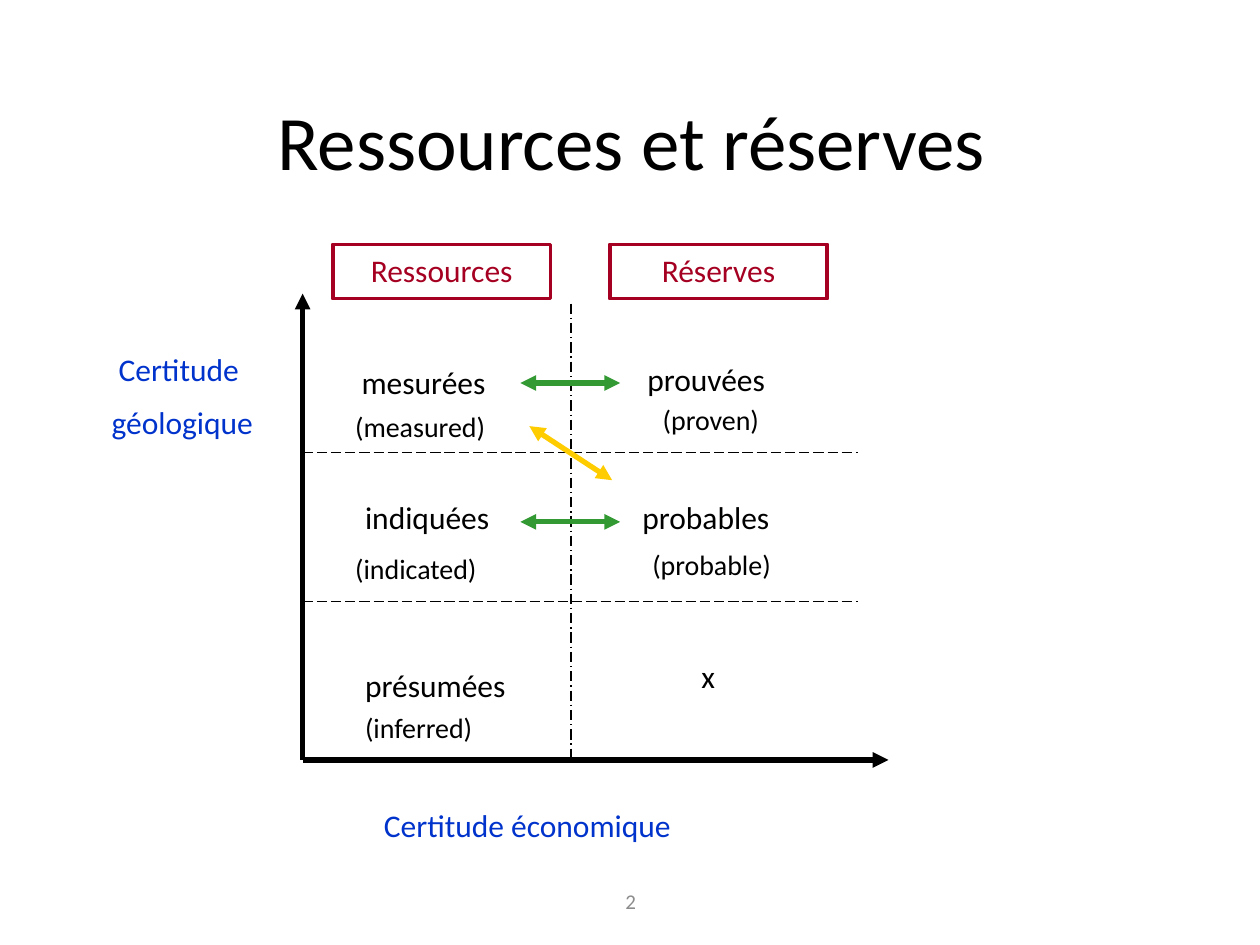
import pptx
import pptx.util
import pptx.dml.color
import pptx.enum.dml
import pptx.enum.shapes
import pptx.enum.text
import pptx.oxml
import pptx.oxml.ns

Cm = pptx.util.Cm
Pt = pptx.util.Pt
DASH = pptx.enum.dml.MSO_LINE
ALIGN = pptx.enum.text.PP_ALIGN
ANCHOR = pptx.enum.text.MSO_ANCHOR
BLACK, BLUE, RED, GREEN, GOLD, GREY = (
    "000000", "0033CC", "A50021", "339933", "FFCC00", "8C8C8C")


def paint(text):
    return pptx.dml.color.RGBColor.from_string(text)


def write(frame, text, size, color, align=ALIGN.LEFT, gap=0):
    frame.text = text
    for index, para in enumerate(frame.paragraphs):
        para.alignment = align
        para.space_before = Pt(gap if index else 0)
        for run in para.runs:
            run.font.name = "Calibri"
            run.font.size = Pt(size)
            run.font.color.rgb = paint(color)


def label(slide, text, place, size=18, color=BLACK, align=ALIGN.LEFT, wrap=True):
    box = slide.shapes.add_textbox(*map(Cm, place))
    write(box.text_frame, text, size, color, align, 9)
    box.text_frame.word_wrap = wrap
    return box


def heading(slide, text, left):
    box = slide.shapes.add_shape(
        pptx.enum.shapes.MSO_SHAPE.RECTANGLE, Cm(left), Cm(4.93), Cm(4.39), Cm(1.09))
    box.shadow.inherit = False
    box.fill.background()
    box.line.color.rgb = paint(RED)
    box.line.width = Pt(2.25)
    box.text_frame.vertical_anchor = ANCHOR.TOP
    write(box.text_frame, text, 18, RED, ALIGN.CENTER)


def draw(slide, ends, color=BLACK, width=3, tips=(), dash=None):
    line = slide.shapes.add_connector(
        pptx.enum.shapes.MSO_CONNECTOR.STRAIGHT, *map(Cm, ends))
    line.line.color.rgb = paint(color)
    line.line.width = Pt(width)
    if dash:
        line.line.dash_style = dash
    stroke = line.line._get_or_add_ln()
    for tip in tips:
        end = pptx.oxml.ns.qn("a:" + tip)
        stroke.append(stroke.makeelement(end, {"type": "triangle"}))
    props = line._element.spPr
    props.append(props.makeelement(pptx.oxml.ns.qn("a:effectLst"), {}))


def name(slide, text):
    title = slide.shapes.title
    title.left, title.top, title.width, title.height = map(
        Cm, (1.3, 0.91, 22.86, 3.81))
    title.text_frame.vertical_anchor = ANCHOR.MIDDLE
    write(title.text_frame, text, 44, BLACK, ALIGN.CENTER)


def grid(slide):
    left, base = 6.1, 15.32
    draw(slide, (left, base, 17.91, base), tips=["tailEnd"])
    draw(slide, (left, base, left, 5.92), tips=["tailEnd"])
    draw(slide, (11.51, 6.12, 11.51, base), width=0.75, dash=DASH.LONG_DASH_DOT)
    for top in (9.12, 12.12):
        draw(slide, (left, top, 17.3, top), width=0.75, dash=DASH.LONG_DASH)


def main():
    deck = pptx.Presentation()
    deck.slide_width, deck.slide_height = Cm(25.4), Cm(19.05)
    slide = deck.slides.add_slide(deck.slide_layouts[5])
    name(slide, "Ressources et réserves")
    grid(slide)
    heading(slide, "Ressources", 6.71)
    heading(slide, "Réserves", 12.29)
    label(slide, "Certitude économique", (7.49, 16.13, 13.21, 1.02), color=BLUE)
    label(slide, "Certitude\n géologique", (1.7, 6.93, 3.81, 3.3),
          color=BLUE, align=ALIGN.CENTER)

    for text, left, top, width in (
            ("mesurées", 7.04, 7.19, 3.3),
            ("indiquées", 7.11, 9.91, 3.23),
            ("présumées", 7.11, 13.31, 3.66),
            ("prouvées", 12.8, 7.14, 3.12),
            ("probables", 12.7, 9.91, 3.3),
            ("x", 13.89, 13.13, 0.84)):
        label(slide, text, (left, top, width, 1.02), wrap=False)

    for text, left, top in (
            ("(measured)", 6.91, 8.13),
            ("(indicated)", 6.91, 11),
            ("(inferred)", 7.11, 14.2),
            ("(proven)", 13.11, 8),
            ("(probable)", 12.9, 10.92)):
        label(slide, text, (left, top, 3.61, 0.94), size=16)

    for ends, color in (
            ((10.49, 7.72, 12.5, 7.72), GREEN),
            ((10.49, 10.52, 12.5, 10.52), GREEN),
            ((10.67, 8.59, 12.34, 9.68), GOLD)):
        draw(slide, ends, color, tips=["headEnd", "tailEnd"])

    page = label(slide, "2", (8.69, 17.65, 8.05, 1.02), 12, GREY, ALIGN.CENTER)
    page.text_frame.vertical_anchor = ANCHOR.MIDDLE
    deck.save("out.pptx")


if __name__ == "__main__":
    main()
